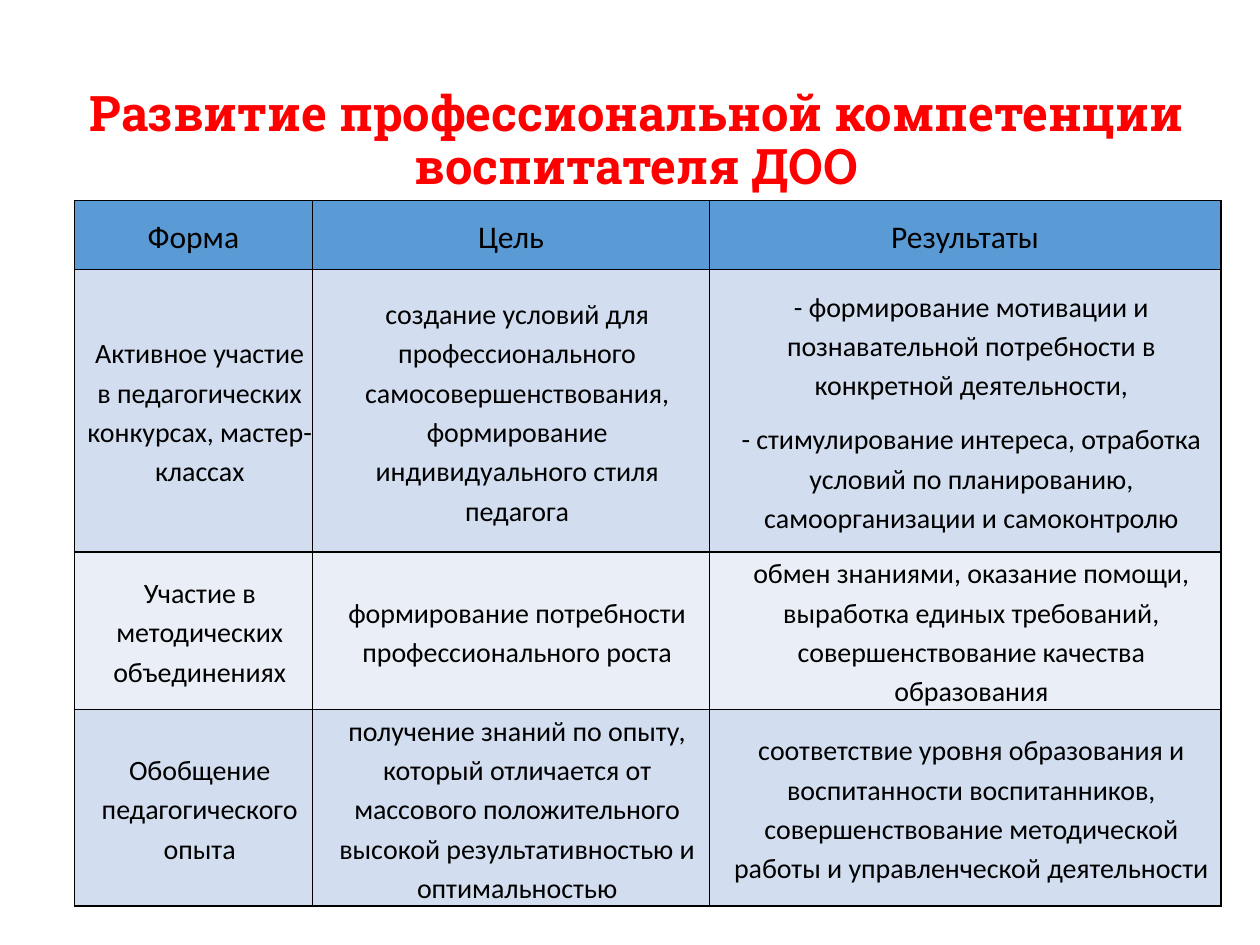
from dataclasses import dataclass

from lxml import etree
from pptx import Presentation
from pptx.dml.color import RGBColor
from pptx.enum.text import MSO_ANCHOR, MSO_AUTO_SIZE, PP_ALIGN
from pptx.oxml.ns import qn
from pptx.util import Inches, Pt

CENTER = PP_ALIGN.CENTER
MIDDLE = MSO_ANCHOR.MIDDLE
NO_AUTOFIT = MSO_AUTO_SIZE.NONE

COLORS = {
    "title": "FF0000",
    "text": "000000",
    "border": "000000",
    "header": "5B9BD5",
    "band_dark": "D2DEEF",
    "band_light": "EAEFF7",
}
TITLE_FONT = {"name": "Roboto Slab", "size": Pt(28), "bold": True}
HEADER_FONT = {"name": "Calibri", "size": Pt(18), "bold": False}
BODY_FONT = {"name": "Calibri", "size": Pt(16), "bold": False}
CELL_PARAGRAPH = {"alignment": CENTER, "line_spacing": 1.15, "space_after": Pt(8.3)}
CELL_FRAME = {
    "vertical_anchor": MIDDLE,
    "margin_left": 0,
    "margin_top": 0,
    "margin_right": 0,
    "margin_bottom": 0,
}
COLUMN_WIDTHS = (1.89, 3.15, 4.06)


@dataclass
class TableRow:
    height: float
    fill: str
    cells: tuple[str, str, str]
    font: dict
    indent: float = 0.1


ROWS = [
    TableRow(0.55, "header", ("Форма", "Цель", "Результаты"), HEADER_FONT, 0),
    TableRow(2.24, "band_dark", (
        "Активное участие в педагогических конкурсах, мастер- классах",
        "создание условий для профессионального самосовершенствования, "
        "формирование индивидуального стиля педагога",
        "- формирование мотивации и познавательной потребности в конкретной "
        "деятельности,\n"
        "- стимулирование интереса, отработка условий по планированию, "
        "самоорганизации и самоконтролю",
    ), BODY_FONT),
    TableRow(1.03, "band_light", (
        "Участие в методических объединениях",
        "формирование потребности профессионального роста",
        "обмен знаниями, оказание помощи, выработка единых требований, "
        "совершенствование качества образования",
    ), BODY_FONT),
    TableRow(1.37, "band_dark", (
        "Обобщение педагогического опыта",
        "получение знаний по опыту, который отличается от массового "
        "положительного высокой результативностью и оптимальностью",
        "соответствие уровня образования и воспитанности воспитанников, "
        "совершенствование методической работы и управленческой деятельности",
    ), BODY_FONT),
]


def apply(target, values: dict) -> None:
    for name, value in values.items():
        setattr(target, name, value)


def rgb(name: str) -> RGBColor:
    return RGBColor.from_string(COLORS[name])


def add_borders(cell, color: str, width: int) -> None:
    tc_pr = cell._tc.get_or_add_tcPr()
    for index, side in enumerate(("lnL", "lnR", "lnT", "lnB")):
        ln = etree.Element(qn(f"a:{side}"), w=str(width))
        fill = etree.SubElement(ln, qn("a:solidFill"))
        etree.SubElement(fill, qn("a:srgbClr"), val=COLORS[color])
        tc_pr.insert(index, ln)


def format_cell(cell, text: str, row: TableRow) -> None:
    apply(cell, CELL_FRAME)
    cell.fill.solid()
    cell.fill.fore_color.rgb = rgb(row.fill)
    add_borders(cell, "border", Pt(1))
    cell.text_frame.text = text
    for p in cell.text_frame.paragraphs:
        apply(p, CELL_PARAGRAPH)
        p._p.get_or_add_pPr().set("marL", str(Inches(row.indent)))
        for r in p.runs:
            apply(r.font, row.font)
            r.font.color.rgb = rgb("text")


def add_title(slide, text: str) -> None:
    title = slide.shapes.title
    apply(title, {"left": Inches(0.54), "top": Inches(0.4),
                  "width": Inches(9.02), "height": Inches(1.45)})
    tf = title.text_frame
    tf.text = text
    apply(tf, {"word_wrap": True, "auto_size": NO_AUTOFIT, "vertical_anchor": MIDDLE})
    p = tf.paragraphs[0]
    apply(p, {"alignment": CENTER, "line_spacing": 0.9})
    r = p.runs[0]
    apply(r.font, TITLE_FONT)
    r.font.color.rgb = rgb("title")


def add_forms_table(slide, rows: list[TableRow]) -> None:
    frame = slide.shapes.add_table(
        len(rows), len(COLUMN_WIDTHS), Inches(0.59), Inches(1.59),
        Inches(sum(COLUMN_WIDTHS)), Inches(sum(row.height for row in rows)))
    table = frame.table
    for column, width in zip(table.columns, COLUMN_WIDTHS):
        column.width = Inches(width)
    for table_row, row in zip(table.rows, rows):
        table_row.height = Inches(row.height)
        for cell, text in zip(table_row.cells, row.cells):
            format_cell(cell, text, row)


def main() -> None:
    prs = Presentation()
    prs.slide_width, prs.slide_height = Inches(10), Inches(7.5)
    slide = prs.slides.add_slide(prs.slide_layouts[5])  # Title Only
    add_title(slide, "Развитие профессиональной компетенции воспитателя ДОО")
    add_forms_table(slide, ROWS)
    prs.save("out.pptx")


if __name__ == "__main__":
    main()
